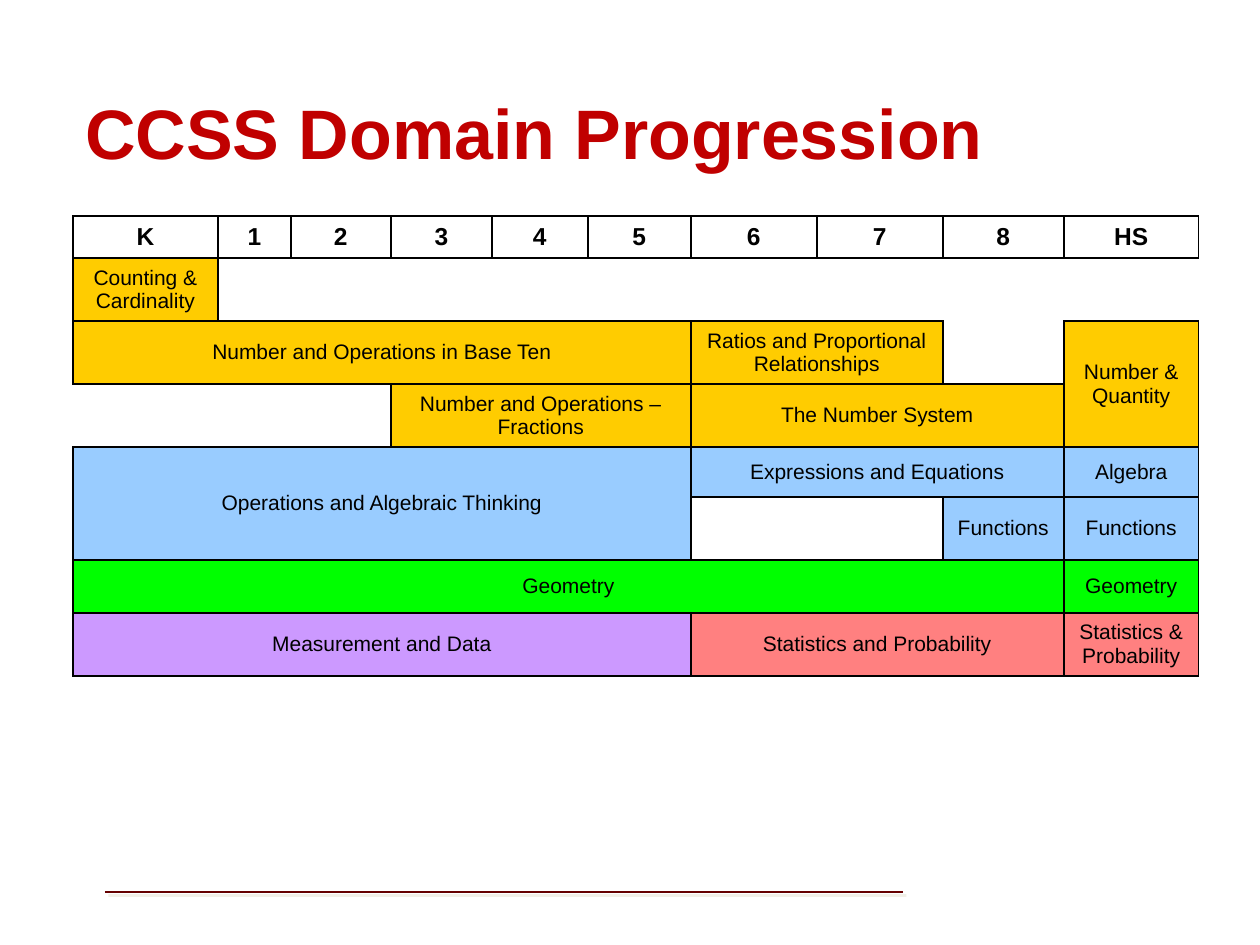
from lxml.etree import SubElement
from pptx import Presentation
from pptx.dml.color import RGBColor
from pptx.enum.shapes import MSO_CONNECTOR
from pptx.enum.text import MSO_ANCHOR, PP_ALIGN
from pptx.oxml.ns import qn
from pptx.util import Emu, Pt

SCALE = 914400 / 126
FONT = "Arial"
BLACK, WHITE, RED, MAROON, SAND = "000000", "FFFFFF", "C00000", "660000", "EEECE1"
GOLD, BLUE, GREEN, PURPLE, CORAL = "FFCC00", "99CCFF", "00FF00", "CC99FF", "FF8080"

COLUMNS = [118, 24, 73, 100, 101, 96, 103, 126, 126, 121, 135]
ROWS = [42, 63, 63, 63, 50, 63, 53, 63, 67]
GRADES = ["K", "1", "2", "3", "4", "5", "6", "7", "8", "HS"]
SIDES = {"a:lnL": (0, -1), "a:lnR": (0, 1), "a:lnT": (-1, 0), "a:lnB": (1, 0)}

# Each domain: row, column, row span, column span, label, fill
DOMAINS = [
    (1, 0, 1, 2, "Counting & Cardinality", GOLD),
    (2, 0, 1, 7, "Number and Operations in Base Ten", GOLD),
    (2, 7, 1, 2, "Ratios and Proportional Relationships", GOLD),
    (2, 10, 2, 1, "Number & Quantity", GOLD),
    (3, 1, 1, 2, "", WHITE),
    (3, 4, 1, 3, "Number and Operations – Fractions", GOLD),
    (3, 7, 1, 3, "The Number System", GOLD),
    (4, 0, 2, 7, "Operations and Algebraic Thinking", BLUE),
    (4, 7, 1, 3, "Expressions and Equations", BLUE),
    (4, 10, 1, 1, "Algebra", BLUE),
    (5, 9, 1, 1, "Functions", BLUE),
    (5, 10, 1, 1, "Functions", BLUE),
    (6, 0, 1, 10, "Geometry", GREEN),
    (6, 10, 1, 1, "Geometry", GREEN),
    (7, 0, 1, 7, "Measurement and Data", PURPLE),
    (7, 7, 1, 3, "Statistics and Probability", CORAL),
    (7, 10, 1, 1, "Statistics & Probability", CORAL),
    (8, 0, 1, 7, "", WHITE),
]


def px(length):
    """Turn pixels into EMU."""
    return Emu(round(length * SCALE))


def color(value):
    """Turn a hex string into a colour."""
    return RGBColor.from_string(value)


def set_font(para, size, value, bold):
    """Set the font of a whole paragraph."""
    font = para.font
    font.name, font.size, font.bold = FONT, Pt(size), bold
    font.color.rgb = color(value)


def add_title(page, text):
    """Add the slide title, centred vertically in its box."""
    box = page.shapes.add_textbox(px(73), px(53), px(1121), px(158))
    frame = box.text_frame
    frame.word_wrap = True
    frame.vertical_anchor = MSO_ANCHOR.MIDDLE
    frame.text = text
    set_font(frame.paragraphs[0], 40, RED, True)


def add_footer_rule(page):
    """Add the footer line with its offset shadow."""
    rule = page.shapes.add_connector(
        MSO_CONNECTOR.STRAIGHT, px(105), px(892), px(903), px(892))
    rule.line.color.rgb = color(MAROON)
    rule.line.width = Pt(1.5)
    effects = SubElement(rule._element.spPr, qn("a:effectLst"))
    shadow = SubElement(effects, qn("a:outerShdw"), blurRad="0",
                        dist=str(Pt(2.8)), dir="2700000", algn="ctr", rotWithShape="0")
    tint = SubElement(shadow, qn("a:srgbClr"), val=SAND)
    SubElement(tint, qn("a:alpha"), val="75000")


def set_border(cell, side, visible):
    """Draw or hide one side of a cell."""
    line = SubElement(cell._tc.get_or_add_tcPr(), qn(side), w=str(Pt(1)))
    if visible:
        fill = SubElement(line, qn("a:solidFill"))
        SubElement(fill, qn("a:srgbClr"), val=BLACK)
    else:
        SubElement(line, qn("a:noFill"))


def write_label(cell, text, is_header):
    """Write a centred label into a cell."""
    cell.text = text
    cell.vertical_anchor = MSO_ANCHOR.MIDDLE
    cell.margin_left = cell.margin_right = px(11)
    cell.margin_top = cell.margin_bottom = px(6)
    para = cell.text_frame.paragraphs[0]
    para.alignment = PP_ALIGN.CENTER
    if is_header:
        properties = para._p.get_or_add_pPr()
        properties.set("marL", str(px(48)))
        properties.set("indent", str(-px(48)))
    set_font(para, 14 if is_header else 12, BLACK, is_header)


def header_blocks():
    """Return the grade headings, the first one two columns wide."""
    return [(0, index + 1 if index else 0, 1, 1 if index else 2, grade, WHITE)
            for index, grade in enumerate(GRADES)]


def add_progression_table(page):
    """Add the table of domains by grade."""
    frame = page.shapes.add_table(len(ROWS), len(COLUMNS), px(73), px(216),
                                  px(sum(COLUMNS)), px(sum(ROWS)))
    table = frame.table
    table.first_row = table.horz_banding = False
    for column, width in zip(table.columns, COLUMNS):
        column.width = px(width)
    for row, height in zip(table.rows, ROWS):
        row.height = px(height)

    blocks = header_blocks() + DOMAINS
    fills = {(r, c): fill
             for top, left, height, width, text, fill in blocks if text
             for r in range(top, top + height) for c in range(left, left + width)}
    for r in range(len(ROWS)):
        for c in range(len(COLUMNS)):
            cell = table.cell(r, c)
            for side, (down, across) in SIDES.items():
                set_border(cell, side, (r, c) in fills or (r + down, c + across) in fills)
            cell.fill.solid()
            cell.fill.fore_color.rgb = color(fills.get((r, c), WHITE))

    for top, left, height, width, text, fill in blocks:
        cell = table.cell(top, left)
        if height * width > 1:
            cell.merge(table.cell(top + height - 1, left + width - 1))
        if text:
            write_label(cell, text, top == 0)


def main():
    """Build the slide and save it."""
    deck = Presentation()
    deck.slide_width, deck.slide_height = px(1260), px(945)
    page = deck.slides.add_slide(deck.slide_layouts[6])
    add_footer_rule(page)
    add_title(page, "CCSS Domain Progression")
    add_progression_table(page)
    deck.save("out.pptx")


if __name__ == "__main__":
    main()
